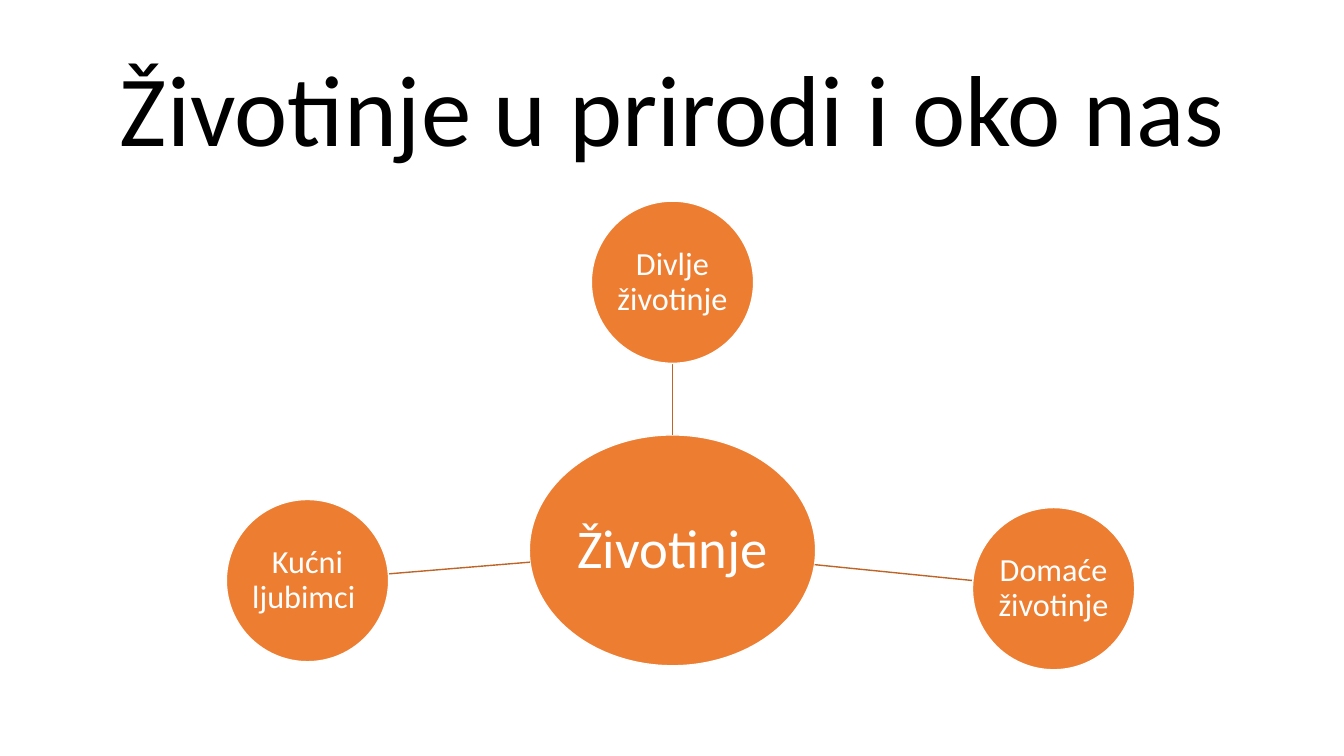
from dataclasses import dataclass
from math import hypot

from lxml import etree
from pptx import Presentation
from pptx.dml.color import RGBColor
from pptx.enum.shapes import MSO_CONNECTOR, MSO_SHAPE
from pptx.enum.text import MSO_ANCHOR, PP_ALIGN
from pptx.oxml.ns import qn
from pptx.shapes.autoshape import Shape
from pptx.slide import Slide
from pptx.util import Inches, Pt

BLACK = RGBColor(0x00, 0x00, 0x00)
WHITE = RGBColor(0xFF, 0xFF, 0xFF)
ORANGE = RGBColor(0xED, 0x7D, 0x31)
BROWN = RGBColor(0xBE, 0x64, 0x27)
FONT = "Calibri"
CENTER = PP_ALIGN.CENTER
MIDDLE = MSO_ANCHOR.MIDDLE
ELLIPSE = MSO_SHAPE.OVAL
STRAIGHT = MSO_CONNECTOR.STRAIGHT


@dataclass(frozen=True)
class Bubble:
    text: str
    center_x: float
    center_y: float
    width: float = 1.61
    height: float = 1.61
    size: float = 23
    inset: float = 0.02

    def edge_toward(self, other: "Bubble") -> tuple[float, float]:
        delta_x = other.center_x - self.center_x
        delta_y = other.center_y - self.center_y
        scale = 1 / hypot(2 * delta_x / self.width, 2 * delta_y / self.height)
        return self.center_x + delta_x * scale, self.center_y + delta_y * scale


HUB = Bubble("Životinje ", 6.67, 5.46, 2.84, 2.29, size=39, inset=0.03)
SATELLITES = [
    Bubble("Divlje životinje", 6.67, 2.8),
    Bubble("Domaće životinje ", 10.45, 5.84),
    Bubble("Kućni ljubimci ", 3.05, 5.76),
]


def write_text(shape: Shape, text: str, *, size: float, color: RGBColor,
               inset_x: float, inset_y: float) -> None:
    frame = shape.text_frame
    frame.word_wrap = True
    frame.vertical_anchor = MIDDLE
    frame.margin_left = frame.margin_right = Inches(inset_x)
    frame.margin_top = frame.margin_bottom = Inches(inset_y)
    paragraph = frame.paragraphs[0]
    paragraph.alignment = CENTER
    paragraph.line_spacing = 0.9
    run = paragraph.add_run()
    run.text = text
    run.font.name = FONT
    run.font.size = Pt(size)
    run.font.color.rgb = color


def add_title(slide: Slide, text: str) -> None:
    title = slide.shapes.add_textbox(Inches(0.92), Inches(0.4), Inches(11.5), Inches(1.45))
    write_text(title, text, size=72, color=BLACK, inset_x=0.1, inset_y=0.05)


def add_bubble(slide: Slide, bubble: Bubble) -> None:
    shape = slide.shapes.add_shape(
        ELLIPSE,
        Inches(bubble.center_x - bubble.width / 2),
        Inches(bubble.center_y - bubble.height / 2),
        Inches(bubble.width),
        Inches(bubble.height),
    )
    shape.shadow.inherit = False
    shape.fill.solid()
    shape.fill.fore_color.rgb = ORANGE
    shape.line.color.rgb = WHITE
    shape.line.width = Pt(1)
    write_text(shape, bubble.text, size=bubble.size, color=WHITE,
               inset_x=bubble.inset, inset_y=bubble.inset)


def add_spoke(slide: Slide, hub: Bubble, satellite: Bubble) -> None:
    start_x, start_y = hub.edge_toward(satellite)
    end_x, end_y = satellite.edge_toward(hub)
    connector = slide.shapes.add_connector(
        STRAIGHT, Inches(start_x), Inches(start_y), Inches(end_x), Inches(end_y))
    connector.line.color.rgb = BROWN
    connector.line.width = Pt(1)
    etree.SubElement(connector._element.spPr, qn("a:effectLst"))


def main() -> None:
    presentation = Presentation()
    presentation.slide_width = Inches(13.33)
    presentation.slide_height = Inches(7.5)
    slide = presentation.slides.add_slide(presentation.slide_layouts[6])
    add_title(slide, "Životinje u prirodi i oko nas")
    add_bubble(slide, HUB)
    for satellite in SATELLITES:
        add_spoke(slide, HUB, satellite)
        add_bubble(slide, satellite)
    presentation.save("out.pptx")


if __name__ == "__main__":
    main()
